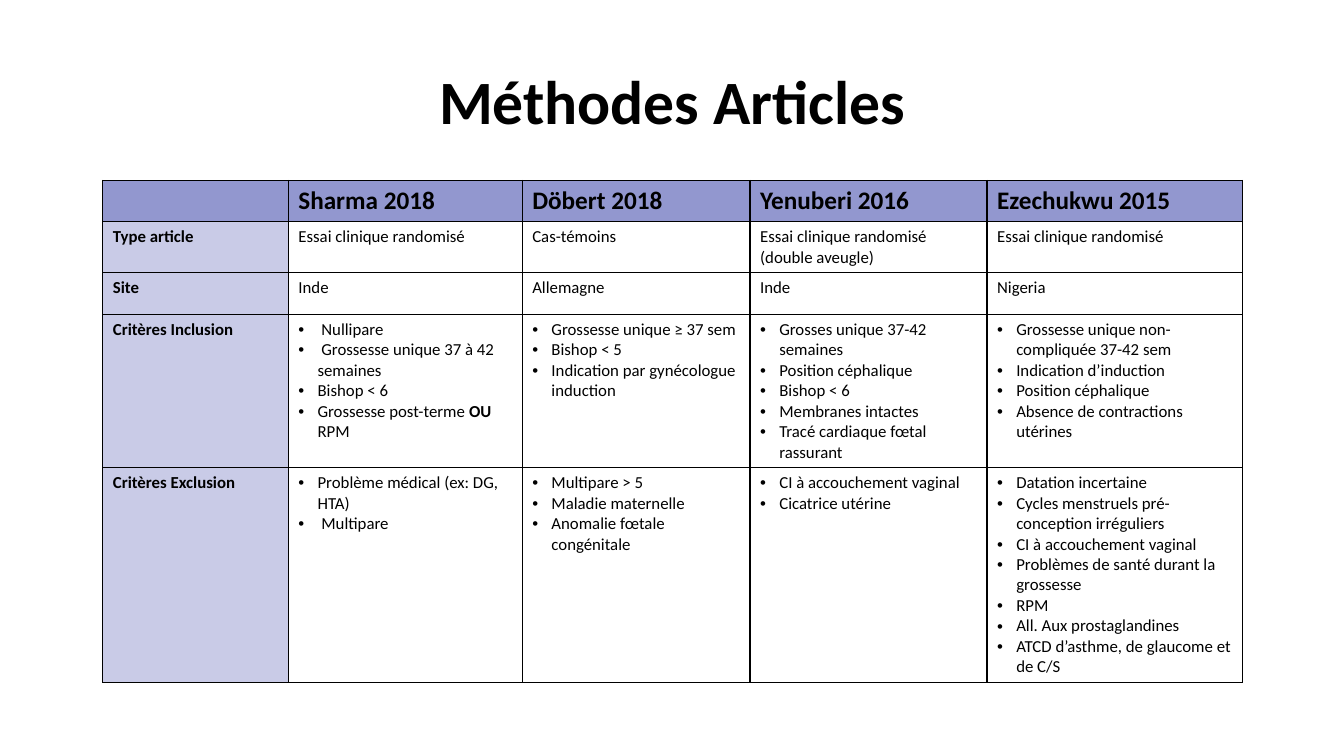
"""Build the slide that compares the methods of four articles in a table."""
from lxml.etree import SubElement
from pptx import Presentation
from pptx.dml.color import RGBColor
from pptx.enum.text import MSO_ANCHOR as Anchor, PP_ALIGN as Align
from pptx.oxml import parse_xml
from pptx.oxml.ns import nsdecls, qn
from pptx.util import Inches, Pt

HEADERS = ["", "Sharma 2018", "Döbert 2018", "Yenuberi 2016", "Ezechukwu 2015"]
CRITERIA = [
    ["Type article", "Essai clinique randomisé", "Cas-témoins",
     "Essai clinique randomisé (double aveugle)", "Essai clinique randomisé"],
    ["Site", "Inde", "Allemagne", "Inde", "Nigeria"],
    ["Critères Inclusion",
     [" Nullipare", " Grossesse unique 37 à 42 semaines", "Bishop < 6",
      "Grossesse post-terme **OU** RPM"],
     ["Grossesse unique ≥ 37 sem", "Bishop < 5",
      "Indication par gynécologue induction"],
     ["Grosses unique 37-42 semaines", "Position céphalique", "Bishop < 6",
      "Membranes intactes", "Tracé cardiaque fœtal rassurant"],
     ["Grossesse unique non-compliquée 37-42 sem", "Indication d’induction",
      "Position céphalique", "Absence de contractions utérines"]],
    ["Critères Exclusion",
     ["Problème médical (ex: DG, HTA)", " Multipare"],
     ["Multipare > 5", "Maladie maternelle", "Anomalie fœtale congénitale"],
     ["CI à accouchement vaginal", "Cicatrice utérine"],
     ["Datation incertaine", "Cycles menstruels pré-conception irréguliers",
      "CI à accouchement vaginal", "Problèmes de santé durant la grossesse",
      "RPM", "All. Aux prostaglandines",
      "ATCD d’asthme, de glaucome et de C/S"]],
]
COLUMN_WIDTHS = [1.84, 2.32, 2.26, 2.35, 2.53]
ROW_HEIGHT = 0.41


def color(code):
    return RGBColor.from_string(code)


class Page:
    font = "Calibri"
    ink = "000000"
    header_fill = "9297CF"
    label_fill = "C9CBE7"
    indent = 0.19

    def __init__(self, deck):
        self.slide = deck.slides.add_slide(deck.slide_layouts[5])

    def format_span(self, span, size, bold):
        span.font.name = self.font
        span.font.size = Pt(size)
        span.font.bold = bold
        span.font.color.rgb = color(self.ink)

    def title(self, text, left, top, width, height):
        box = self.slide.shapes.title
        box.left, box.top = Inches(left), Inches(top)
        box.width, box.height = Inches(width), Inches(height)
        box.text_frame.text = text
        box.text_frame.vertical_anchor = Anchor.MIDDLE
        para = box.text_frame.paragraphs[0]
        para.alignment = Align.CENTER
        para.line_spacing = 0.9
        self.format_span(para.runs[0], 44, True)

    def bullet(self, para):
        properties = para._p.get_or_add_pPr()
        properties.set("marL", str(Inches(self.indent)))
        properties.set("indent", str(-Inches(self.indent)))
        SubElement(properties, qn("a:buFont"), typeface="Arial")
        SubElement(properties, qn("a:buChar"), char="•")

    def borders(self, cell):
        properties = cell._tc.get_or_add_tcPr()
        for position, side in enumerate(["lnL", "lnR", "lnT", "lnB"]):
            properties.insert(position, parse_xml(
                f'<a:{side} {nsdecls("a")} w="{Pt(1)}"><a:solidFill>'
                f'<a:srgbClr val="{self.ink}"/></a:solidFill></a:{side}>'))

    def cell(self, cell, content, size, bold, fill):
        if fill:
            cell.fill.solid()
            cell.fill.fore_color.rgb = color(fill)
        else:
            cell.fill.background()
        self.borders(cell)
        listed = isinstance(content, list)
        lines = content if listed else [content]
        cell.text_frame.text = "\n".join(line.replace("**", "") for line in lines)
        for para, line in zip(cell.text_frame.paragraphs, lines):
            if listed:
                self.bullet(para)
            if "**" in line:
                para.clear()
                for position, part in enumerate(line.split("**")):
                    span = para.add_run()
                    span.text = part
                    self.format_span(span, size, position % 2 == 1)
            else:
                for span in para.runs:
                    self.format_span(span, size, bold)

    def table(self, rows, left, top, widths, height):
        frame = self.slide.shapes.add_table(
            len(rows), len(widths), Inches(left), Inches(top),
            Inches(sum(widths)), Inches(height * len(rows)))
        table = frame.table
        table.horz_banding = False
        for column, width in zip(table.columns, widths):
            column.width = Inches(width)
        for row_index, row in enumerate(rows):
            table.rows[row_index].height = Inches(height)
            for column_index, content in enumerate(row):
                header, label = row_index == 0, column_index == 0
                fill = self.header_fill if header else self.label_fill if label else None
                self.cell(table.cell(row_index, column_index), content,
                          18 if header else 12, header or label, fill)


def main():
    deck = Presentation()
    deck.slide_width, deck.slide_height = Inches(13.33), Inches(7.5)
    page = Page(deck)
    page.title("Méthodes Articles", 1.17, 0.29, 11, 1.5)
    page.table([HEADERS] + CRITERIA, 1.02, 1.79, COLUMN_WIDTHS, ROW_HEIGHT)
    deck.save("out.pptx")


if __name__ == "__main__":
    main()
